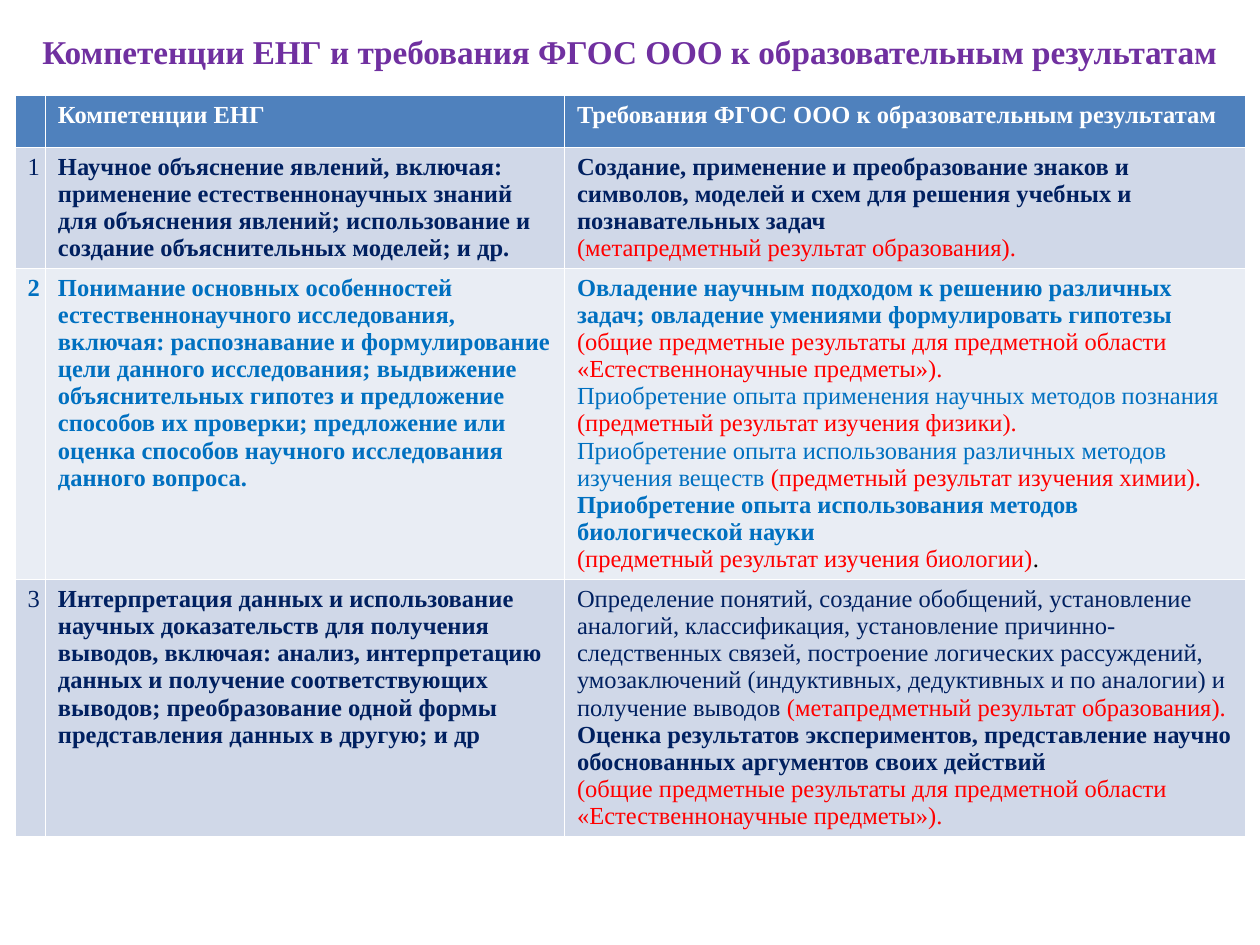
"""Builds a slide with a table matching science literacy competences to education standards."""
from pptx import Presentation
from pptx.dml.color import RGBColor
from pptx.enum import text
from pptx.util import Inches, Pt

COLORS = {
    "title": "7030A0", "white": "FFFFFF", "navy": "002060", "blue": "0070C0",
    "red": "FF0000", "black": "000000",
    "header": "4F81BD", "band": "D0D8E8", "light": "E9EDF4",
}
FONT = "Times New Roman"


def add_run(p, words, size, color, bold):
    r = p.add_run()
    r.text = words
    r.font.name = FONT
    r.font.size = Pt(size)
    r.font.bold = bold
    r.font.color.rgb = RGBColor.from_string(COLORS[color])


META = "(метапредметный результат образования)."
GENERAL = "(общие предметные результаты для предметной области «Естественнонаучные предметы»)."

rows = [
    ("header", 0.41, [
        [],
        [[("Компетенции ЕНГ", "white", True)]],
        [[("Требования ФГОС ООО к образовательным результатам", "white", True)]],
    ]),
    ("band", 0.96, [
        [[("1", "navy", False)]],
        [[("Научное объяснение явлений, включая: применение естественнонаучных знаний "
           "для объяснения явлений; использование и создание объяснительных моделей; и др.",
           "navy", True)]],
        [[("Создание, применение и преобразование знаков и символов, моделей и схем "
           "для решения учебных и познавательных задач", "navy", True)],
         [(META, "red", False)]],
    ]),
    ("light", 2.47, [
        [[("2", "blue", True)]],
        [[("Понимание основных особенностей естественнонаучного исследования, включая: "
           "распознавание и формулирование цели данного исследования; выдвижение "
           "объяснительных гипотез и предложение способов их проверки; предложение или "
           "оценка способов научного исследования данного вопроса.", "blue", True)]],
        [[("Овладение научным подходом к решению различных задач; овладение умениями "
           "формулировать гипотезы ", "blue", True),
          (GENERAL, "red", False)],
         [("Приобретение опыта применения научных методов познания ", "blue", False),
          ("(предметный результат изучения физики).", "red", False)],
         [("Приобретение опыта использования различных методов изучения веществ ",
           "blue", False),
          ("(предметный результат изучения химии). ", "red", False),
          ("Приобретение опыта использования методов биологической науки", "blue", True)],
         [("(предметный результат изучения биологии)", "red", False),
          (".", "black", False)]],
    ]),
    ("band", 2.04, [
        [[("3", "navy", False)]],
        [[("Интерпретация данных и использование научных доказательств для получения "
           "выводов, включая: анализ, интерпретацию данных и получение соответствующих "
           "выводов; преобразование одной формы представления данных в другую; и др",
           "navy", True)]],
        [[("Определение понятий, создание обобщений, установление аналогий, классификация, "
           "установление причинно-следственных связей, построение логических рассуждений, "
           "умозаключений (индуктивных, дедуктивных и по аналогии) и получение выводов ",
           "navy", False),
          (META + " ", "red", False),
          ("Оценка результатов экспериментов, представление научно обоснованных аргументов "
           "своих действий", "navy", True)],
         [(GENERAL, "red", False)]],
    ]),
]
widths = [0.24, 4.12, 5.41]

prs = Presentation()
prs.slide_width, prs.slide_height = Inches(10), Inches(7.5)
s = prs.slides.add_slide(prs.slide_layouts[6])

table = s.shapes.add_table(
    len(rows), len(widths), Inches(0.12), Inches(0.76),
    Inches(sum(widths)), Inches(sum(height for _, height, _ in rows))).table
for column, width in zip(table.columns, widths):
    column.width = Inches(width)

for i, (fill, height, cells) in enumerate(rows):
    table.rows[i].height = Inches(height)
    for j, paragraphs in enumerate(cells):
        cell = table.cell(i, j)
        cell.fill.solid()
        cell.fill.fore_color.rgb = RGBColor.from_string(COLORS[fill])
        tf = cell.text_frame
        for k, runs in enumerate(paragraphs):
            p = tf.add_paragraph() if k else tf.paragraphs[0]
            for words, color, bold in runs:
                add_run(p, words, 14, color, bold)

sp = s.shapes.add_textbox(Inches(0), Inches(0.07), Inches(10), Inches(0.68))
tf = sp.text_frame
tf.word_wrap = True
tf.vertical_anchor = text.MSO_ANCHOR.MIDDLE
p = tf.paragraphs[0]
p.alignment = text.PP_ALIGN.CENTER
add_run(p, "Компетенции ЕНГ и требования ФГОС ООО к образовательным результатам",
        19, "title", True)

prs.save("out.pptx")
